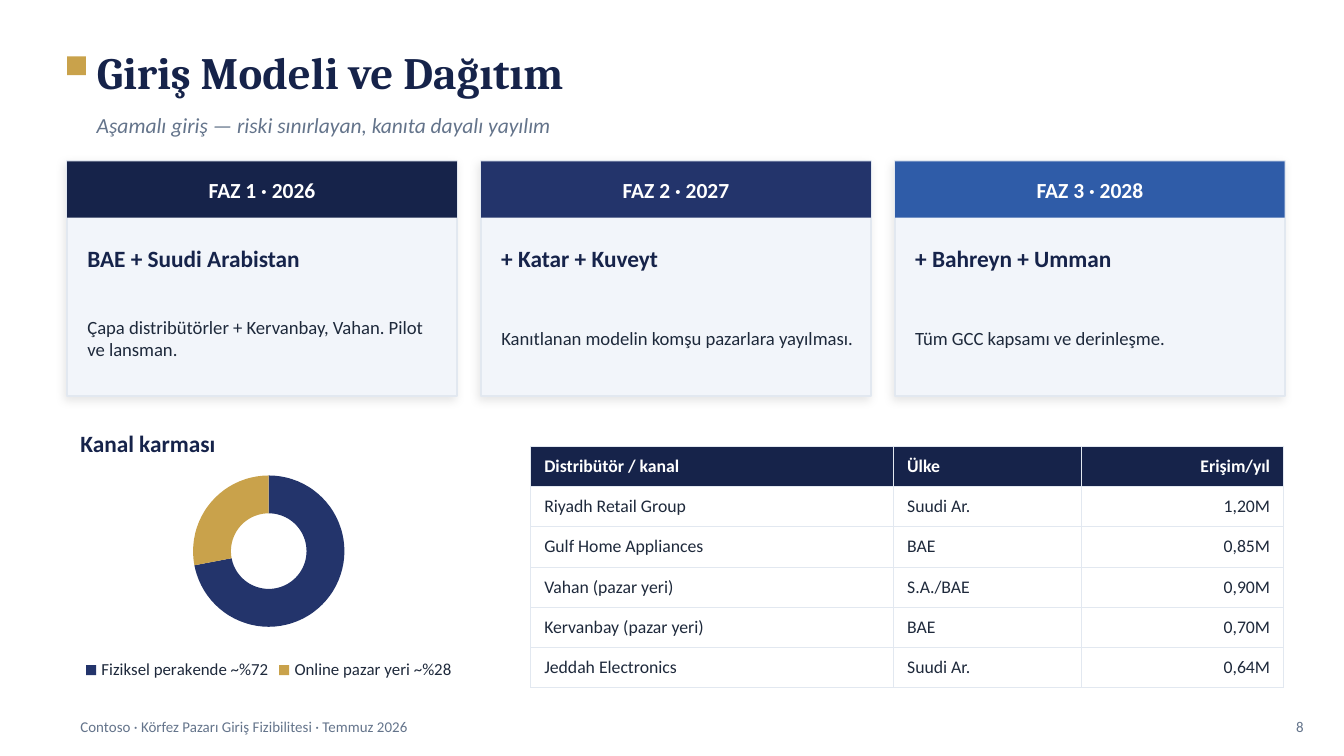
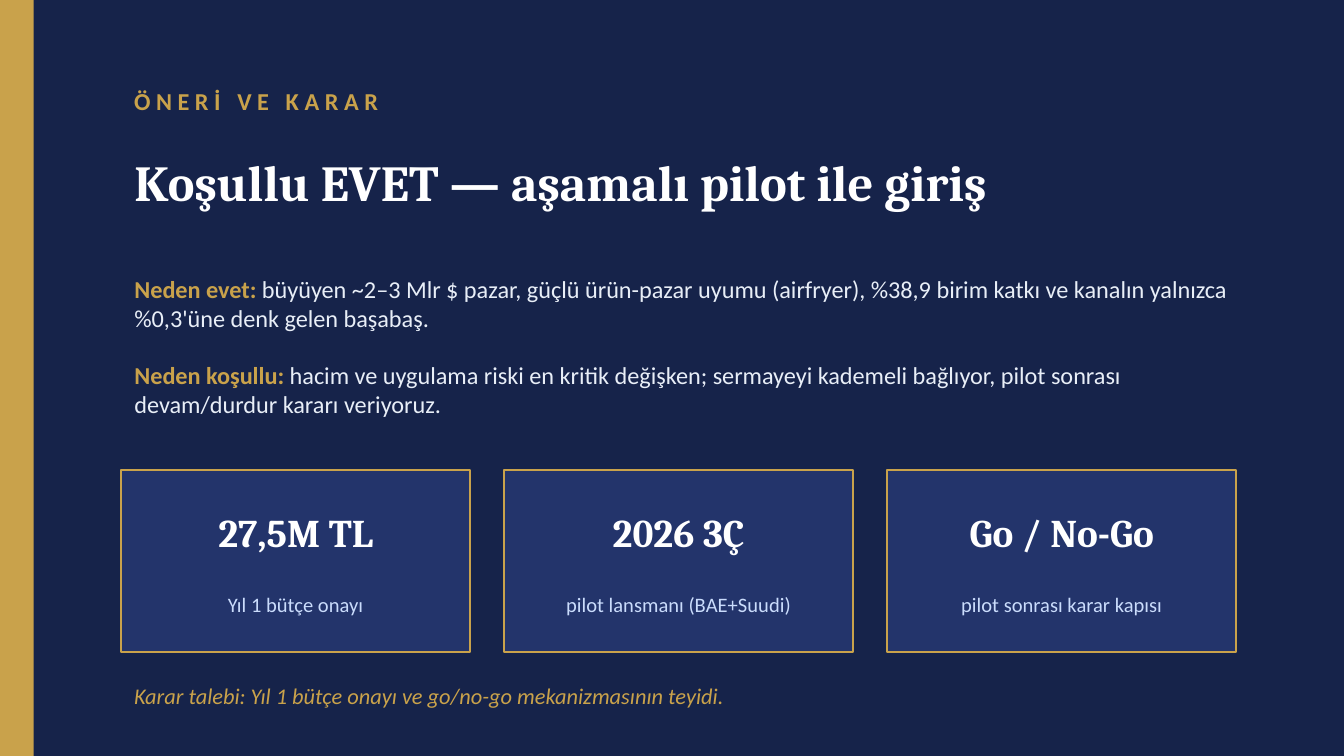
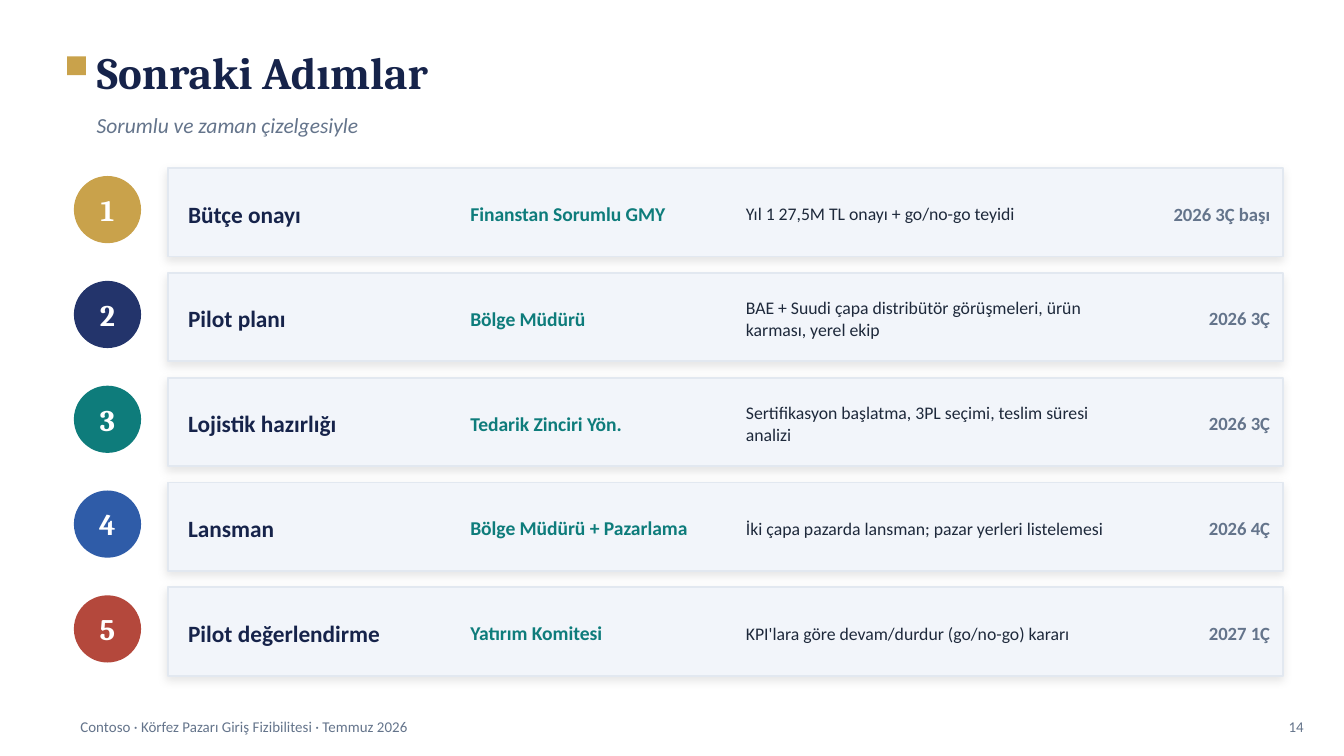
from lxml import etree
from pptx import Presentation
from pptx.chart.data import CategoryChartData
from pptx.dml.color import RGBColor
from pptx.enum import chart as chart_enum, shapes, text
from pptx.oxml import parse_xml
from pptx.oxml.ns import nsdecls, qn
from pptx.util import Inches, Pt

NAVY = RGBColor(0x16, 0x23, 0x4A)
INDIGO = RGBColor(0x23, 0x34, 0x6B)
BLUE = RGBColor(0x2F, 0x5C, 0xA8)
GOLD = RGBColor(0xC9, 0xA2, 0x4B)
TEAL = RGBColor(0x0E, 0x7C, 0x7B)
RED = RGBColor(0xB4, 0x48, 0x3C)
SLATE = RGBColor(0x64, 0x74, 0x8B)
INK = RGBColor(0x1E, 0x29, 0x3B)
PANEL = RGBColor(0xF2, 0xF5, 0xFA)
BORDER = RGBColor(0xE2, 0xE8, 0xF0)
PALE = RGBColor(0xE8, 0xEE, 0xF7)
SKY = RGBColor(0xCA, 0xDC, 0xFC)
WHITE = RGBColor(0xFF, 0xFF, 0xFF)

HEADING_FONT, BODY_FONT = "Cambria", "Calibri"
LEFT, CENTER, RIGHT = text.PP_ALIGN.LEFT, text.PP_ALIGN.CENTER, text.PP_ALIGN.RIGHT
RECTANGLE, OVAL = shapes.MSO_SHAPE.RECTANGLE, shapes.MSO_SHAPE.OVAL
TITLE_AND_BODY, TITLE_ONLY = 1, 5
WIDTH = 10
HEIGHT = WIDTH * 9 / 16

FOOTER = "Contoso · Körfez Pazarı Giriş Fizibilitesi · Temmuz 2026"
PHASES = [
    ("FAZ 1 · 2026", NAVY, "BAE + Suudi Arabistan",
     "Çapa distribütörler + Kervanbay, Vahan. Pilot ve lansman."),
    ("FAZ 2 · 2027", INDIGO, "+ Katar + Kuveyt",
     "Kanıtlanan modelin komşu pazarlara yayılması."),
    ("FAZ 3 · 2028", BLUE, "+ Bahreyn + Umman", "Tüm GCC kapsamı ve derinleşme."),
]
CHANNELS = [("Fiziksel perakende ~%72", 72, INDIGO), ("Online pazar yeri ~%28", 28, GOLD)]
DISTRIBUTORS = [
    ("Distribütör / kanal", "Ülke", "Erişim/yıl"),
    ("Riyadh Retail Group", "Suudi Ar.", "1,20M"),
    ("Gulf Home Appliances", "BAE", "0,85M"),
    ("Vahan (pazar yeri)", "S.A./BAE", "0,90M"),
    ("Kervanbay (pazar yeri)", "BAE", "0,70M"),
    ("Jeddah Electronics", "Suudi Ar.", "0,64M"),
]
REASONS = [
    ("Neden evet: ", "büyüyen ~2–3 Mlr $ pazar, güçlü ürün-pazar uyumu (airfryer), "
     "%38,9 birim katkı ve kanalın yalnızca %0,3'üne denk gelen başabaş."),
    ("Neden koşullu: ", "hacim ve uygulama riski en kritik değişken; sermayeyi kademeli "
     "bağlıyor, pilot sonrası devam/durdur kararı veriyoruz."),
]
DECISIONS = [
    ("27,5M TL", "Yıl 1 bütçe onayı"),
    ("2026 3Ç", "pilot lansmanı (BAE+Suudi)"),
    ("Go / No-Go", "pilot sonrası karar kapısı"),
]
STEPS = [
    (GOLD, "Bütçe onayı", "Finanstan Sorumlu GMY",
     "Yıl 1 27,5M TL onayı + go/no-go teyidi", "2026 3Ç başı"),
    (INDIGO, "Pilot planı", "Bölge Müdürü",
     "BAE + Suudi çapa distribütör görüşmeleri, ürün karması, yerel ekip", "2026 3Ç"),
    (TEAL, "Lojistik hazırlığı", "Tedarik Zinciri Yön.",
     "Sertifikasyon başlatma, 3PL seçimi, teslim süresi analizi", "2026 3Ç"),
    (BLUE, "Lansman", "Bölge Müdürü + Pazarlama",
     "İki çapa pazarda lansman; pazar yerleri listelemesi", "2026 4Ç"),
    (RED, "Pilot değerlendirme", "Yatırım Komitesi",
     "KPI'lara göre devam/durdur (go/no-go) kararı", "2027 1Ç"),
]
STEP_COLUMNS = [  # left, width, format
    (1.4, 2.2, dict(size=12.5, color=NAVY, bold=True)),
    (3.5, 2.1, dict(size=10.5, color=TEAL, bold=True)),
    (5.55, 2.85, dict(size=9.5, color=INK)),
    (8.45, 1, dict(size=10, color=SLATE, bold=True, align=RIGHT)),
]


def write(paragraph, content, size, color, font=BODY_FONT, bold=False, italic=False,
          align=LEFT, tracking=0):
    """Append one formatted run; tracking is in points."""
    paragraph.alignment = align
    run = paragraph.add_run()
    run.text = content
    run.font.name, run.font.size = font, Pt(size)
    run.font.bold, run.font.italic = bold, italic
    run.font.color.rgb = color
    if tracking:
        run.font._element.set("spc", str(tracking * 100))


def inches(box):
    return [Inches(length) for length in box]


def prepare_frame(shape, padded=False):
    frame = shape.text_frame
    frame.word_wrap = True
    frame.auto_size = text.MSO_AUTO_SIZE.NONE
    frame.vertical_anchor = text.MSO_ANCHOR.MIDDLE
    side, edge = (Inches(0.1), Inches(0.05)) if padded else (0, 0)
    frame.margin_left = frame.margin_right = side
    frame.margin_top = frame.margin_bottom = edge
    return frame


def add_text(slide, box, content, padded=False, **style):
    frame = prepare_frame(slide.shapes.add_textbox(*inches(box)), padded)
    write(frame.paragraphs[0], content, **style)


def place(placeholder, box, padded=False):
    placeholder.left, placeholder.top, placeholder.width, placeholder.height = inches(box)
    return prepare_frame(placeholder, padded)


def add_title(slide, box, content, padded=False, **style):
    frame = place(slide.shapes.title, box, padded)
    write(frame.paragraphs[0], content, font=HEADING_FONT, bold=True, **style)


def add_block(slide, box, fill, line=None, kind=RECTANGLE):
    block = slide.shapes.add_shape(kind, *inches(box))
    block.shadow.inherit = False
    block.fill.solid()
    block.fill.fore_color.rgb = fill
    if line is None:
        block.line.fill.background()
    else:
        block.line.color.rgb = line
        block.line.width = Pt(1)
    return block


def add_label_block(slide, box, fill, label, kind=RECTANGLE, **style):
    block = add_block(slide, box, fill, kind=kind)
    write(prepare_frame(block).paragraphs[0], label, color=WHITE, bold=True,
          align=CENTER, **style)


def add_panel(slide, box):
    """Pale card with a soft drop shadow."""
    panel = add_block(slide, box, PANEL, BORDER)
    effects = panel._element.spPr.find(qn("a:effectLst"))
    effects.append(parse_xml(
        f'<a:outerShdw {nsdecls("a")} blurRad="{Pt(5)}" dist="{Pt(2)}" dir="8100000" '
        'algn="bl" rotWithShape="0"><a:srgbClr val="000000"><a:alpha val="10000"/>'
        '</a:srgbClr></a:outerShdw>'))


def add_content_slide(presentation, title, subtitle, number):
    slide = presentation.slides.add_slide(presentation.slide_layouts[TITLE_ONLY])
    add_block(slide, (0.5, 0.42, 0.14, 0.14), GOLD)
    add_title(slide, (0.72, 0.28, 8.9, 0.5), title, size=24, color=NAVY)
    add_text(slide, (0.72, 0.78, 8.9, 0.3), subtitle, size=11.5, color=SLATE, italic=True)
    add_text(slide, (0.5, 5.28, 7, 0.25), FOOTER, padded=True, size=8, color=SLATE)
    add_text(slide, (9.2, 5.28, 0.6, 0.25), str(number), padded=True, size=8,
             color=SLATE, align=RIGHT)
    return slide


def add_channel_chart(slide, box):
    data = CategoryChartData()
    data.categories = [name for name, _, _ in CHANNELS]
    data.add_series("Series 1", [share for _, share, _ in CHANNELS])
    chart = slide.shapes.add_chart(
        chart_enum.XL_CHART_TYPE.DOUGHNUT, *inches(box), data).chart
    chart.has_title = False
    chart.font.name, chart.font.size = BODY_FONT, Pt(10)
    chart.has_legend = True
    legend = chart.legend
    legend.position = chart_enum.XL_LEGEND_POSITION.BOTTOM
    legend.include_in_layout = False
    legend.font.name, legend.font.size = BODY_FONT, Pt(9)
    legend.font.color.rgb = INK
    plot = chart.plots[0]
    plot.vary_by_categories = True
    plot._element.find(qn("c:holeSize")).set("val", "60")
    for index, (_, _, color) in enumerate(CHANNELS):
        point = plot.series[0].points[index].format
        point.fill.solid()
        point.fill.fore_color.rgb = color
        point.line.fill.background()


def set_borders(cell):
    properties = cell._tc.get_or_add_tcPr()
    for position, side in enumerate(("lnL", "lnR", "lnT", "lnB")):
        line = etree.Element(qn(f"a:{side}"), w=str(Pt(0.5)))
        fill = etree.SubElement(line, qn("a:solidFill"))
        etree.SubElement(fill, qn("a:srgbClr"), val=str(BORDER))
        properties.insert(position, line)


def add_distributor_table(slide, left, top):
    widths, row_height = (2.7, 1.4, 1.5), 0.3
    box = (left, top, sum(widths), row_height * len(DISTRIBUTORS))
    table = slide.shapes.add_table(len(DISTRIBUTORS), len(widths), *inches(box)).table
    for column, width in zip(table.columns, widths):
        column.width = Inches(width)
    for row, values in enumerate(DISTRIBUTORS):
        header = row == 0
        for column, value in enumerate(values):
            cell = table.cell(row, column)
            cell.vertical_anchor = text.MSO_ANCHOR.MIDDLE
            if header:
                cell.fill.solid()
                cell.fill.fore_color.rgb = NAVY
            else:
                cell.fill.background()
            set_borders(cell)
            write(cell.text_frame.paragraphs[0], value, size=9.5, bold=header,
                  color=WHITE if header else INK,
                  align=RIGHT if column == len(widths) - 1 else LEFT)


def build_entry_model(presentation):
    slide = add_content_slide(presentation, "Giriş Modeli ve Dağıtım",
                              "Aşamalı giriş — riski sınırlayan, kanıta dayalı yayılım", 8)
    width, gap, top = 2.9, 0.18, 1.2
    for index, (phase, color, markets, detail) in enumerate(PHASES):
        left = 0.5 + index * (width + gap)
        add_panel(slide, (left, top, width, 1.75))
        add_label_block(slide, (left, top, width, 0.42), color, phase, size=11.5)
        add_text(slide, (left + 0.15, top + 0.52, 2.6, 0.4), markets,
                 size=12.5, color=NAVY, bold=True)
        add_text(slide, (left + 0.15, top + 0.94, 2.62, 0.75), detail, size=10, color=INK)
    add_text(slide, (0.5, 3.15, 4, 0.3), "Kanal karması", padded=True,
             size=12.5, color=NAVY, bold=True)
    add_channel_chart(slide, (0.4, 3.4, 3.2, 1.7))
    add_distributor_table(slide, 3.95, 3.32)


def build_decision(presentation):
    slide = presentation.slides.add_slide(presentation.slide_layouts[TITLE_AND_BODY])
    slide.background.fill.solid()
    slide.background.fill.fore_color.rgb = NAVY
    add_block(slide, (0, 0, 0.25, HEIGHT), GOLD)
    add_text(slide, (0.9, 0.55, 8, 0.4), "ÖNERİ VE KARAR", padded=True,
             size=13, color=GOLD, bold=True, tracking=3)
    add_title(slide, (0.9, 1, 8.6, 0.7), "Koşullu EVET — aşamalı pilot ile giriş",
              padded=True, size=27, color=WHITE)

    frame = place(slide.placeholders[1], (0.9, 1.95, 8.5, 1.25), padded=True)
    for index, (lead, reason) in enumerate(REASONS):
        paragraph = frame.add_paragraph() if index else frame.paragraphs[0]
        properties = paragraph._p.get_or_add_pPr()
        properties.set("marL", "0")
        properties.set("indent", "0")
        etree.SubElement(properties, qn("a:buNone"))
        paragraph.space_before = Pt(15 if index else 0)
        write(paragraph, lead, size=13, color=GOLD, bold=True)
        write(paragraph, reason, size=13, color=PALE)

    width, gap, top = 2.6, 0.25, 3.5
    for index, (headline, caption) in enumerate(DECISIONS):
        left = 0.9 + index * (width + gap)
        add_block(slide, (left, top, width, 1.35), INDIGO, GOLD)
        add_text(slide, (left, top + 0.18, width, 0.55), headline, size=21, color=WHITE,
                 font=HEADING_FONT, bold=True, align=CENTER)
        add_text(slide, (left + 0.1, top + 0.75, width - 0.2, 0.5), caption,
                 size=11, color=SKY, align=CENTER)
    add_text(slide, (0.9, 5, 8.5, 0.35),
             "Karar talebi: Yıl 1 bütçe onayı ve go/no-go mekanizmasının teyidi.",
             padded=True, size=12, color=GOLD, italic=True)


def build_next_steps(presentation):
    slide = add_content_slide(presentation, "Sonraki Adımlar",
                              "Sorumlu ve zaman çizelgesiyle", 14)
    for index, (color, *values) in enumerate(STEPS):
        top = 1.25 + index * 0.78
        add_label_block(slide, (0.55, top + 0.06, 0.5, 0.5), color, str(index + 1),
                        kind=OVAL, size=16, font=HEADING_FONT)
        add_panel(slide, (1.25, top, 8.3, 0.66))
        for value, (left, width, style) in zip(values, STEP_COLUMNS):
            add_text(slide, (left, top + 0.04, width, 0.6), value, **style)


def main():
    presentation = Presentation()
    presentation.slide_width, presentation.slide_height = inches((WIDTH, HEIGHT))
    build_entry_model(presentation)
    build_decision(presentation)
    build_next_steps(presentation)
    presentation.save("out.pptx")


if __name__ == "__main__":
    main()
